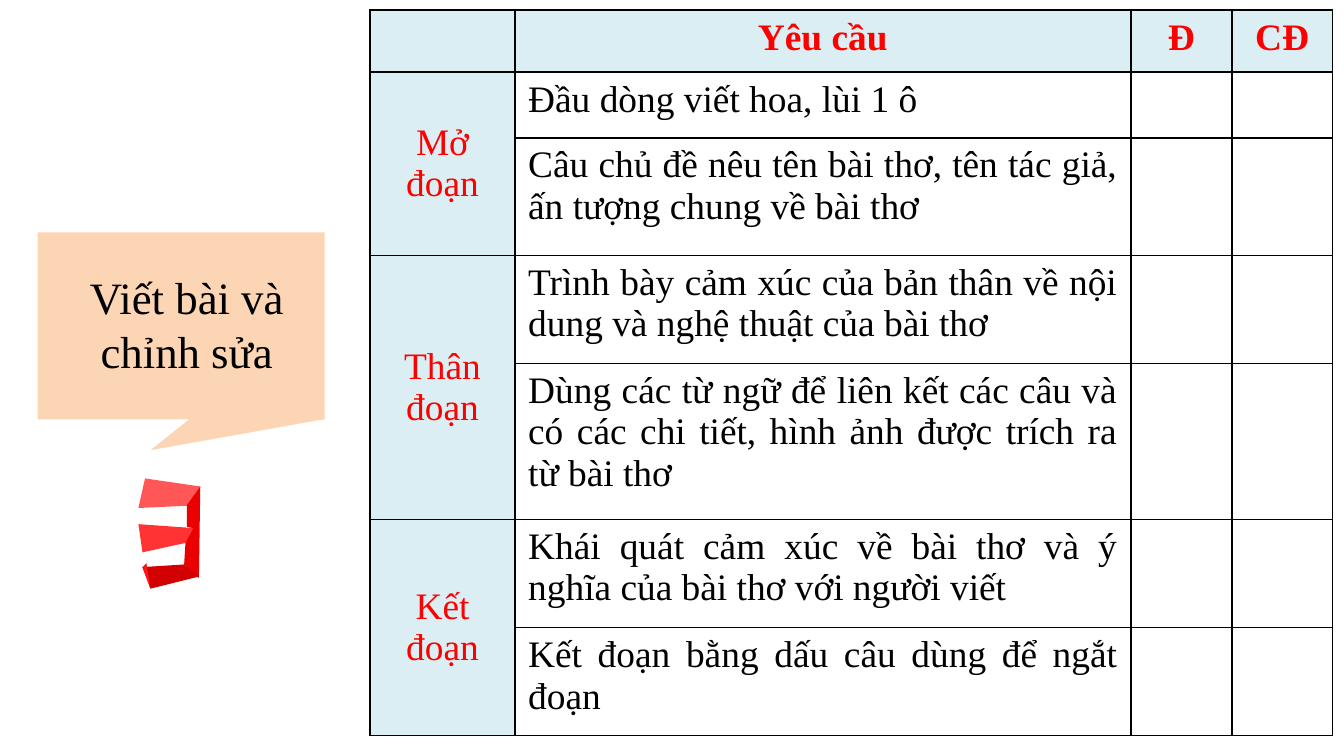
"""Builds a Vietnamese writing checklist slide with a callout and a table."""
from lxml import etree
from pptx import Presentation
from pptx import util as u
from pptx.dml.color import RGBColor
from pptx.enum import shapes, text
from pptx.oxml.ns import qn

PX = 4572
COLORS = {
    "black": "000000", "white": "FFFFFF", "red": "FF0000",
    "header": "DBEEF4", "callout": "FCD5B5",
    "middle": "FF3333", "top": "FF5757", "side": "EA0000",
    "bottom": "D20000", "corner": "FF1515",
}
ALIGN = text.PP_ALIGN

NUMERAL_FACES = {
    "middle": [(206, 780), (290, 786), (276, 808), (212, 822)],
    "top": [(216, 712), (298, 724), (292, 752), (206, 756)],
    "side": [(298, 724), (296, 860), (274, 840), (276, 808),
             (288, 786), (278, 784), (278, 752)],
    "bottom": [(212, 844), (274, 840), (296, 858), (224, 876)],
    "corner": [(212, 844), (218, 838), (224, 876)],
}
HEADINGS = ["", "Yêu cầu", "Đ", "CĐ"]
SECTIONS = {
    "Mở đoạn": [
        "Đầu dòng viết hoa, lùi 1 ô",
        "Câu chủ đề nêu tên bài thơ, tên tác giả, ấn tượng chung về bài thơ",
    ],
    "Thân đoạn": [
        "Trình bày cảm xúc của bản thân về nội dung và nghệ thuật của bài thơ",
        "Dùng các từ ngữ để liên kết các câu và có các chi tiết, hình ảnh được trích ra từ bài thơ",
    ],
    "Kết đoạn": [
        "Khái quát cảm xúc về bài thơ và ý nghĩa của bài thơ với người viết",
        "Kết đoạn bằng dấu câu dùng để ngắt đoạn",
    ],
}
COLUMNS = [215, 917, 150, 150]
ROWS = [92, 98, 175, 161, 232, 161, 161]


def write(frame, words, size=20, color="black", bold=False, align=ALIGN.CENTER):
    """Put one formatted paragraph into a text frame."""
    para = frame.paragraphs[0]
    para.alignment = align
    span = para.add_run()
    span.text = words
    span.font.name = "Times New Roman"
    span.font.size = u.Pt(size)
    span.font.bold = bold
    span.font.color.rgb = RGBColor.from_string(COLORS[color])


class Painter:
    """Holds the style and the current slide."""

    def __init__(self, page):
        self.page = page

    def fill(self, target, color):
        """Give a shape or cell a flat fill."""
        target.fill.solid()
        target.fill.fore_color.rgb = RGBColor.from_string(COLORS[color])

    def paint(self, shape, color):
        """Fill a shape and drop its line and shadow."""
        shape.shadow.inherit = False
        self.fill(shape, color)
        shape.line.fill.background()

    def polygon(self, points, color):
        """Draw a closed outline."""
        builder = self.page.shapes.build_freeform(*points[0], scale=PX)
        builder.add_line_segments(points[1:], close=True)
        self.paint(builder.convert_to_shape(), color)

    def rectangle(self, left, top, width, height, color):
        """Draw a plain rectangle."""
        area = [n * PX for n in (left, top, width, height)]
        self.paint(self.page.shapes.add_shape(shapes.MSO_SHAPE.RECTANGLE, *area), color)

    def label(self, left, top, width, height, words, **style):
        """Add a wrapped text box."""
        area = [n * PX for n in (left, top, width, height)]
        frame = self.page.shapes.add_textbox(*area).text_frame
        frame.word_wrap = True
        frame.margin_left = frame.margin_right = 16 * PX
        frame.margin_top = frame.margin_bottom = 8 * PX
        write(frame, words, **style)

    def table(self, left, top, columns, rows):
        """Add a bordered table with a tinted first row and column."""
        area = [n * PX for n in (left, top, sum(columns), sum(rows))]
        grid = self.page.shapes.add_table(len(rows), len(columns), *area).table
        grid.first_row = grid.horz_banding = False
        for column, width in zip(grid.columns, columns):
            column.width = width * PX
        for i, height in enumerate(rows):
            grid.rows[i].height = height * PX
            for j in range(len(columns)):
                self.border(grid.cell(i, j))
                self.fill(grid.cell(i, j), "white" if i and j else "header")
        return grid

    def border(self, cell):
        """Outline a cell on all four sides."""
        props = cell._tc.get_or_add_tcPr()
        for side in ("a:lnL", "a:lnR", "a:lnT", "a:lnB"):
            line = etree.SubElement(props, qn(side), w=str(u.Pt(1)))
            fill = etree.SubElement(line, qn("a:solidFill"))
            etree.SubElement(fill, qn("a:srgbClr"), val=COLORS["black"])


def main():
    """Build and save the deck."""
    deck = Presentation()
    deck.slide_width, deck.slide_height = 2000 * PX, 1125 * PX
    painter = Painter(deck.slides.add_slide(deck.slide_layouts[6]))

    for color, points in NUMERAL_FACES.items():
        painter.polygon(points, color)

    painter.polygon([(482, 464), (224, 670), (482, 624)], "callout")
    painter.rectangle(56, 346, 427, 278, "callout")
    painter.label(72, 394, 412, 178, "Viết bài và chỉnh sửa", size=24)

    grid = painter.table(551, 15, COLUMNS, ROWS)
    for j, heading in enumerate(HEADINGS):
        if heading:
            write(grid.cell(0, j).text_frame, heading, color="red", bold=True)
    row = 1
    for section, criteria in SECTIONS.items():
        title = grid.cell(row, 0)
        title.merge(grid.cell(row + len(criteria) - 1, 0))
        title.vertical_anchor = text.MSO_ANCHOR.MIDDLE
        write(title.text_frame, section, color="red")
        for criterion in criteria:
            write(grid.cell(row, 1).text_frame, criterion, align=ALIGN.JUSTIFY)
            row += 1

    deck.save("out.pptx")


if __name__ == "__main__":
    main()
